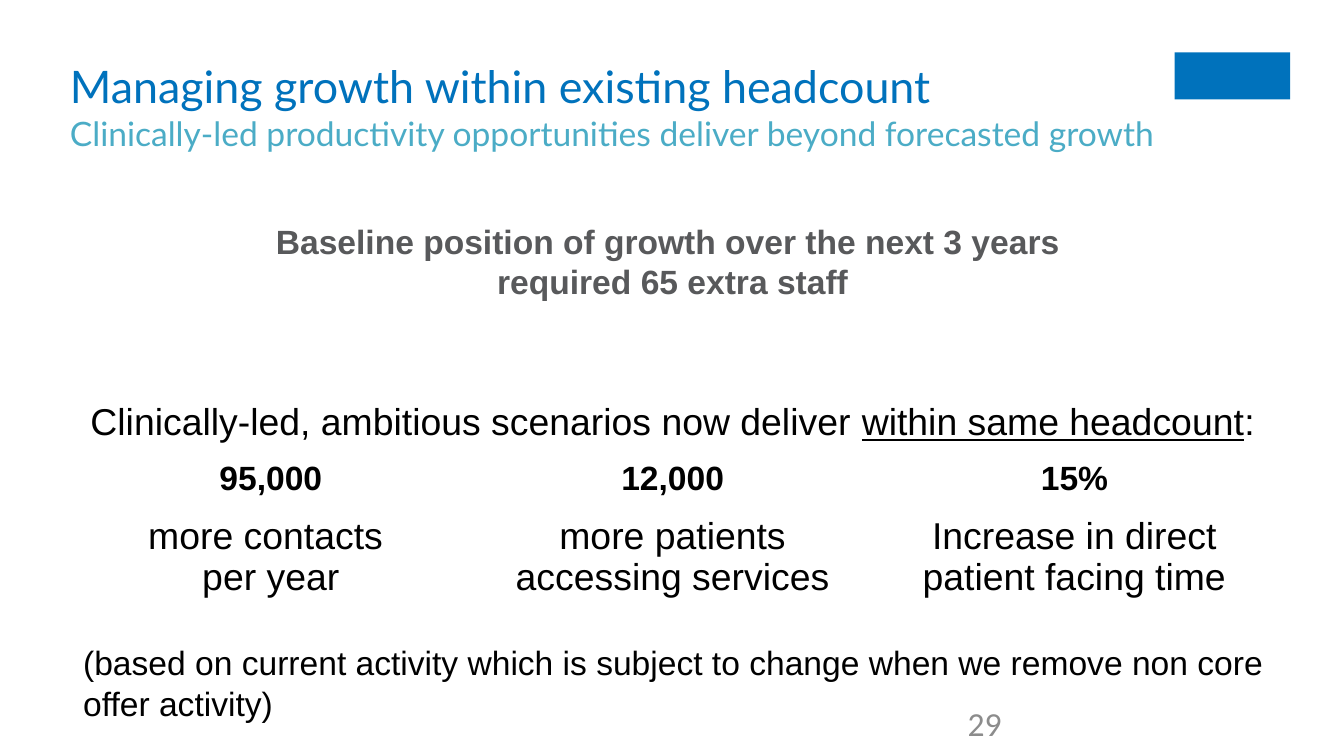
from lxml import etree
from pptx import Presentation
from pptx import util as u
from pptx.dml.color import RGBColor
from pptx.enum import shapes, text
from pptx.oxml.ns import qn

COLORS = {"blue": "0072BC", "teal": "4BACC6", "slate": "58595B",
          "grey": "8C8C8C", "black": "000000", "white": "FFFFFF"}
RESULTS = [("95,000", "more contacts \nper year"),
           ("12,000", "more patients accessing services"),
           ("15%", "Increase in direct patient facing time")]


def add_text(paragraph, content, size=18, font="Arial", color="black",
             bold=False, underline=False, align=text.PP_ALIGN.LEFT):
    """Append formatted text to a paragraph, breaking lines at newlines."""
    paragraph.alignment = align
    for index, line in enumerate(content.split("\n")):
        if index:
            paragraph.add_line_break()
        run = paragraph.add_run()
        run.text = line
        run.font.size = u.Pt(size)
        run.font.name = font
        run.font.bold = bold
        run.font.underline = underline
        run.font.color.rgb = RGBColor.from_string(COLORS[color])


def place(shape, box, inset_x=0, inset_y=0):
    """Move a text shape to a box and return its first paragraph."""
    shape.left, shape.top, shape.width, shape.height = map(u.Inches, box)
    frame = shape.text_frame
    frame.word_wrap = True
    frame.auto_size = text.MSO_AUTO_SIZE.SHAPE_TO_FIT_TEXT
    frame.vertical_anchor = text.MSO_ANCHOR.TOP
    frame.margin_left = frame.margin_right = u.Inches(inset_x)
    frame.margin_top = frame.margin_bottom = u.Inches(inset_y)
    return frame.paragraphs[0]


def add_badge(slide, box):
    """Draw the plain block in the top corner."""
    badge = slide.shapes.add_shape(shapes.MSO_SHAPE.RECTANGLE, *map(u.Inches, box))
    badge.shadow.inherit = False
    badge.fill.solid()
    badge.fill.fore_color.rgb = RGBColor.from_string(COLORS["blue"])
    badge.line.fill.background()


def add_heading(slide, box):
    """Fill the title placeholder with headline and subtitle."""
    paragraph = place(slide.shapes.title, box)
    add_text(paragraph, "Managing growth within existing headcount",
             size=24, font="Lato", color="blue")
    paragraph.add_line_break()
    add_text(paragraph, "Clinically-led productivity opportunities deliver beyond forecasted growth",
             font="Lato", color="teal")


def add_baseline(slide, box):
    """Fill the body placeholder with the unbulleted baseline statement."""
    paragraph = place(slide.placeholders[1], box)
    paragraph.space_before = u.Pt(0)
    properties = paragraph._p.get_or_add_pPr()
    properties.set("marL", "0")
    properties.set("indent", "0")
    etree.SubElement(properties, qn("a:buNone"))
    add_text(paragraph, "Baseline position of growth over the next 3 years \nrequired 65 extra staff",
             color="slate", bold=True, align=text.PP_ALIGN.CENTER)


def add_results(slide, box):
    """Build the results table under a merged heading row."""
    center = text.PP_ALIGN.CENTER
    table = slide.shapes.add_table(3, len(RESULTS), *map(u.Inches, box)).table
    table.horz_banding = False
    for row, height in zip(table.rows, (0.43, 0.41, 0.77)):
        row.height = u.Inches(height)
    for cell in table.iter_cells():
        cell.fill.solid()
        cell.fill.fore_color.rgb = RGBColor.from_string(COLORS["white"])
    table.cell(0, 0).merge(table.cell(0, len(RESULTS) - 1))
    heading = table.cell(0, 0).text_frame.paragraphs[0]
    for content, underline in (("Clinically-led, ambitious scenarios now deliver ", False),
                               ("within same headcount", True), (":", False)):
        add_text(heading, content, size=20, underline=underline, align=center)
    for column, (figure, label) in enumerate(RESULTS):
        add_text(table.cell(1, column).text_frame.paragraphs[0], figure, bold=True, align=center)
        add_text(table.cell(2, column).text_frame.paragraphs[0], label, size=20, align=center)


def add_note(slide, box, content, inset_x=0, inset_y=0, **style):
    """Add a text box holding one formatted paragraph."""
    note = slide.shapes.add_textbox(*map(u.Inches, box))
    add_text(place(note, box, inset_x, inset_y), content, **style)


def main():
    """Build and save the slide."""
    presentation = Presentation()
    presentation.slide_width = u.Inches(10)
    presentation.slide_height = u.Inches(10 * 9 / 16)
    slide = presentation.slides.add_slide(presentation.slide_layouts[1])
    left = 0.52
    add_badge(slide, (8.74, 0.39, 0.86, 0.35))
    add_note(slide, (7.2, 5.23, 2.3, 0.3), "29", font="Calibri", color="grey")
    add_heading(slide, (left, 0.44, 9.08, 0.71))
    add_baseline(slide, (left, 1.64, 8.97, 0.91))
    add_results(slide, (left, 2.94, 8.97, 1.61))
    add_note(slide, (left, 4.73, 9.08, 0.71),
             "(based on current activity which is subject to change when we remove non core offer activity)",
             inset_x=0.1, inset_y=0.05)
    presentation.save("out.pptx")


if __name__ == "__main__":
    main()
